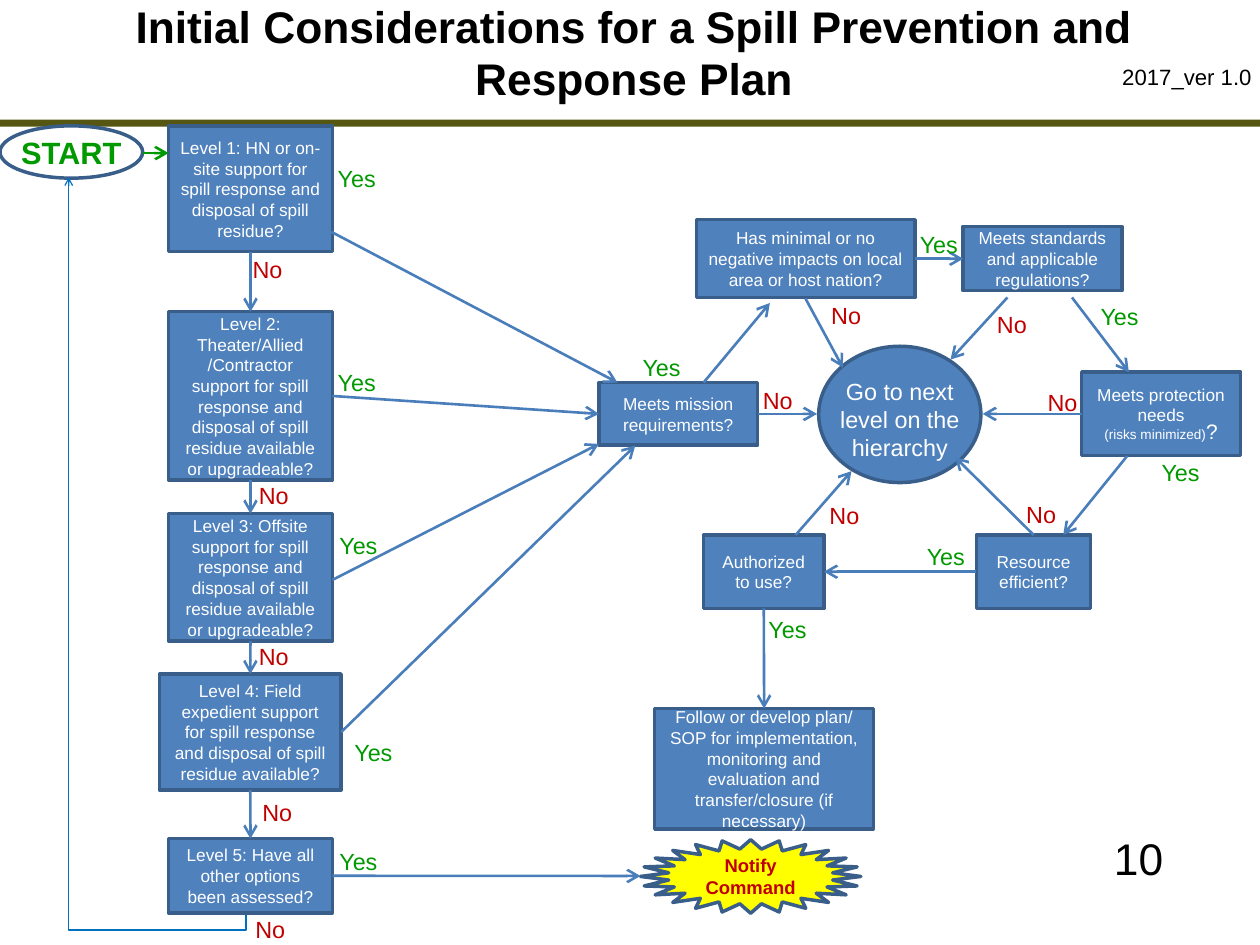
from lxml import etree
from pptx import Presentation
from pptx.dml.color import RGBColor
from pptx.enum.shapes import MSO_CONNECTOR, MSO_SHAPE
from pptx.enum.text import MSO_ANCHOR, PP_ALIGN
from pptx.oxml.ns import qn
from pptx.util import Cm, Pt

STRAIGHT, ELBOW = MSO_CONNECTOR.STRAIGHT, MSO_CONNECTOR.ELBOW
RECTANGLE, OVAL, STAR = MSO_SHAPE.RECTANGLE, MSO_SHAPE.OVAL, MSO_SHAPE.STAR_24_POINT
MIDDLE, TOP_ANCHOR = MSO_ANCHOR.MIDDLE, MSO_ANCHOR.TOP
CENTER, LEFT_ALIGN = PP_ALIGN.CENTER, PP_ALIGN.LEFT
TOP, LEFT, BOTTOM, RIGHT = range(4)

COLORS = {
    "white": "FFFFFF", "black": "000000", "olive": "545612", "box": "4F81BD",
    "border": "3A5E8A", "arrow": "4A7EBB", "return": "0070C0",
    "yes": "009900", "no": "C00000", "yellow": "FFFF00",
}
BOX_FRAME = {"margin_left": Cm(0.33), "margin_right": Cm(0.33), "margin_top": 0,
             "margin_bottom": 0, "word_wrap": True, "vertical_anchor": MIDDLE}
LOOSE_FRAME = {**BOX_FRAME, "margin_left": 0, "margin_right": 0, "word_wrap": False}
LABEL_FRAME = {**BOX_FRAME, "margin_left": Cm(0.36), "margin_right": 0,
               "margin_top": Cm(0.2), "vertical_anchor": TOP_ANCHOR}


def color(name):
    return RGBColor.from_string(COLORS[name])


def write(shape, paragraphs, frame_format, color_name, align=CENTER, bold=False):
    """Fill a shape with paragraphs, each a list of (text, point size) spans."""
    frame = shape.text_frame
    for name, value in frame_format.items():
        setattr(frame, name, value)
    for index, spans in enumerate(paragraphs):
        para = frame.paragraphs[0] if index == 0 else frame.add_paragraph()
        para.alignment = align
        for text, size in spans:
            for number, line in enumerate(text.split("\n")):
                if number:
                    para.add_line_break()
                span = para.add_run()
                span.text = line
                font_format = {"name": "Arial", "size": Pt(size), "bold": bold}
                for name, value in font_format.items():
                    setattr(span.font, name, value)
                span.font.color.rgb = color(color_name)
    return frame


deck = Presentation()
deck.slide_width, deck.slide_height = Cm(36.12), Cm(27.1)
page = deck.slides.add_slide(deck.slide_layouts[6])
shapes = page.shapes

# Heading
bar = shapes.add_shape(RECTANGLE, 0, Cm(3.43), deck.slide_width, Cm(0.2))
bar.shadow.inherit = False
bar.fill.solid()
bar.fill.fore_color.rgb = color("olive")
bar.line.fill.background()

title = shapes.add_textbox(Cm(3.25), 0, Cm(29.85), Cm(3))
title_text = "Initial Considerations for a Spill Prevention and\nResponse Plan"
title_frame = write(title, [[(title_text, 36)]], BOX_FRAME, "black", bold=True)
title_frame.paragraphs[0].line_spacing = Pt(42)

for text, size, place in [
    ("2017_ver 1.0", 18, (31.93, 1.7, 4.19, 1.02)),
    ("10", 36, (31.6, 23.7, 2.08, 1.8)),
]:
    box = shapes.add_textbox(*map(Cm, place))
    write(box, [[(text, size)]], LOOSE_FRAME, "black")

# Questions and steps
boxes = {}
for name, place, text in [
    ("level 1", (4.83, 3.61, 4.7, 3.61),
     "Level 1: HN or on-site support for spill response and disposal of spill residue?"),
    ("level 2", (4.83, 8.94, 4.7, 4.83),
     "Level 2: Theater/Allied /Contractor support for spill response and "
     "disposal of spill residue available or upgradeable?"),
    ("level 3", (4.83, 14.73, 4.7, 3.66),
     "Level 3: Offsite support for spill response and disposal of spill "
     "residue available or upgradeable?"),
    ("level 4", (4.57, 19.33, 5.21, 3.33),
     "Level 4: Field expedient support for spill response and disposal of "
     "spill residue available?"),
    ("level 5", (4.83, 24.05, 4.7, 2.13),
     "Level 5: Have all other options been assessed?"),
    ("mission", (17.17, 10.97, 4.55, 1.8), "Meets mission requirements?"),
    ("impacts", (19.96, 6.3, 6.27, 2.24),
     "Has minimal or no negative impacts on local area or host nation?"),
    ("standards", (27.61, 6.5, 4.55, 1.84),
     "Meets standards and applicable regulations?"),
    ("protection", (31.01, 10.67, 4.55, 2.4), "Meets protection needs"),
    ("authorized", (20.17, 15.34, 3.45, 2.11), "Authorized to use?"),
    ("resource", (27.99, 15.34, 3.28, 2.11), "Resource efficient?"),
    ("plan", (18.77, 20.32, 6.27, 3.45),
     "Follow or develop plan/ SOP for implementation, monitoring and "
     "evaluation and transfer/closure (if necessary)"),
]:
    paragraphs = [[(text, 14)]]
    if name == "protection":
        paragraphs.append([("(risks minimized)", 11), ("?", 17)])
    boxes[name] = shapes.add_shape(RECTANGLE, *map(Cm, place))
    frame = write(boxes[name], paragraphs, BOX_FRAME, "white")
    for para in frame.paragraphs[1:]:
        para.line_spacing = Pt(15)

for name, kind, place, fill, text, size, ink, bold in [
    ("start", OVAL, (0, 3.61, 4.09, 1.5), "white", "START", 25, "yes", True),
    ("next level", OVAL, (23.47, 9.93, 4.65, 3.91), "box",
     "Go to next\nlevel on the\nhierarchy", 19, "white", False),
    ("notify", STAR, (18.36, 24.08, 6.32, 2.11), "yellow",
     "Notify\nCommand", 15, "no", True),
]:
    boxes[name] = shapes.add_shape(kind, *map(Cm, place))
    write(boxes[name], [[(text, size)]], LOOSE_FRAME, ink, bold=bold)
    boxes[name].fill.solid()
    boxes[name].fill.fore_color.rgb = color(fill)
boxes["next level"].text_frame.margin_top = Cm(0.25)
boxes["notify"].adjustments[0] = 0.375

for box in boxes.values():
    box.shadow.inherit = False
    box.line.color.rgb = color("border")
    box.line.width = Pt(2.84)
    if box.auto_shape_type == RECTANGLE:
        box.fill.solid()
        box.fill.fore_color.rgb = color("box")

# Arrows: an end is either a point or a box with its side
arrows = []
for start, end in [
    (("level 1", BOTTOM), ("level 2", TOP)),
    (("level 2", BOTTOM), ("level 3", TOP)),
    (("level 3", BOTTOM), ("level 4", TOP)),
    (("level 4", BOTTOM), ("level 5", TOP)),
    ((9.5, 6.65), (17.7, 10.97)),
    (("level 2", RIGHT), ("mission", LEFT)),
    ((9.53, 16.63), (17.17, 12.73)),
    (("level 4", RIGHT), (18.21, 12.78)),
    (("level 5", RIGHT), (18.36, 25.12)),
    ((20.17, 10.97), (22.07, 8.69)),
    (("impacts", RIGHT), ("standards", LEFT)),
    ((30.73, 8.53), (32.36, 10.67)),
    ((32.31, 13.08), (30.48, 15.34)),
    (("resource", LEFT), ("authorized", RIGHT)),
    (("authorized", BOTTOM), ("plan", TOP)),
    (("mission", RIGHT), (23.42, 11.87)),
    ((23.09, 8.56), (24.16, 10.54)),
    ((28.88, 8.53), (27.25, 10.31)),
    (("protection", LEFT), (28.17, 11.87)),
    (("resource", TOP), (27.38, 13.11)),
    ((22.81, 15.34), (24.41, 13.51)),
    ((4.09, 4.39), (4.83, 4.39)),
]:
    points = [(0, 0) if end_point[0] in boxes else end_point for end_point in (start, end)]
    arrow = shapes.add_connector(STRAIGHT, *map(Cm, points[0] + points[1]))
    if start[0] in boxes:
        arrow.begin_connect(boxes[start[0]], start[1])
    if end[0] in boxes:
        arrow.end_connect(boxes[end[0]], end[1])
    arrows.append((arrow, "arrow", 2.13, "lg"))
arrows[-1] = (arrow, "yes", 2.13, "lg")

# The way back to the start leaves level 5 downwards, so the elbow is turned
way_back = shapes.add_connector(ELBOW, Cm(-6.07), Cm(13.13), Cm(15.09), Cm(18.21))
transform = way_back._element.spPr.find(qn("a:xfrm"))
transform.set("rot", "16200000")
transform.set("flipV", "1")
guides = way_back._element.spPr.find(qn("a:prstGeom")).find(qn("a:avLst"))
etree.SubElement(guides, qn("a:gd"), name="adj1", fmla="val -2000")
arrows.append((way_back, "return", 1, "med"))

for arrow, color_name, width, head in arrows:
    arrow.line.color.rgb = color(color_name)
    arrow.line.width = Pt(width)
    etree.SubElement(arrow.line._get_or_add_ln(), qn("a:tailEnd"),
                     type="arrow", w=head, len=head)
    etree.SubElement(arrow._element.spPr, qn("a:effectLst"))

# Answers beside the arrows
for answer, width, places in [
    ("Yes", 1.88, [
        (9.32, 4.52), (9.32, 10.36), (9.37, 15.04), (9.8, 20.96), (9.37, 24.1),
        (18.06, 9.93), (26.01, 6.4), (31.19, 8.46), (32.94, 12.95),
        (26.21, 15.34), (21.67, 17.45)]),
    ("No", 1.63, [
        (6.88, 7.11), (7.06, 13.61), (7.06, 18.21), (7.16, 22.68), (6.96, 26.04),
        (21.51, 10.87), (23.47, 8.43), (28.22, 8.69), (29.67, 10.92),
        (29.06, 14.15), (23.42, 14.17)]),
]:
    for left, top in places:
        label = shapes.add_textbox(Cm(left), Cm(top), Cm(width), Cm(1.06))
        write(label, [[(answer, 19)]], LABEL_FRAME, answer.lower(), LEFT_ALIGN)

deck.save("out.pptx")
